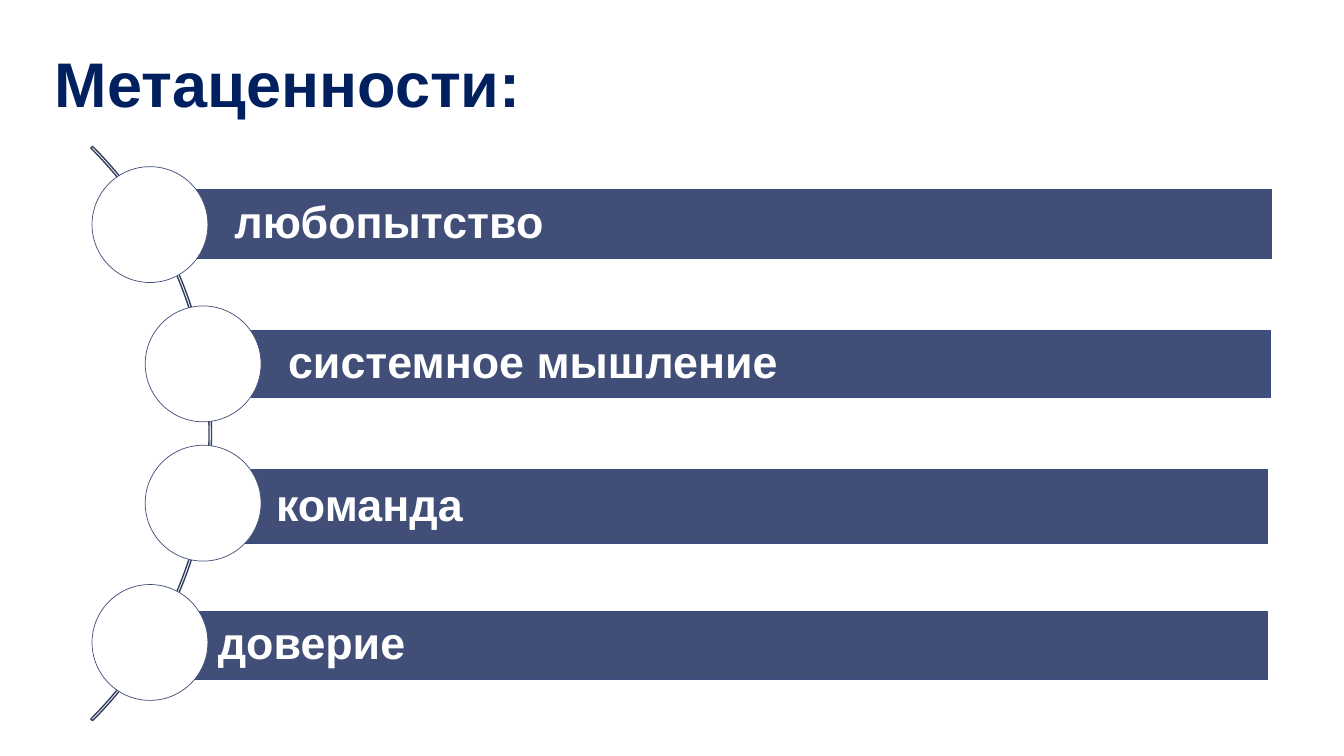
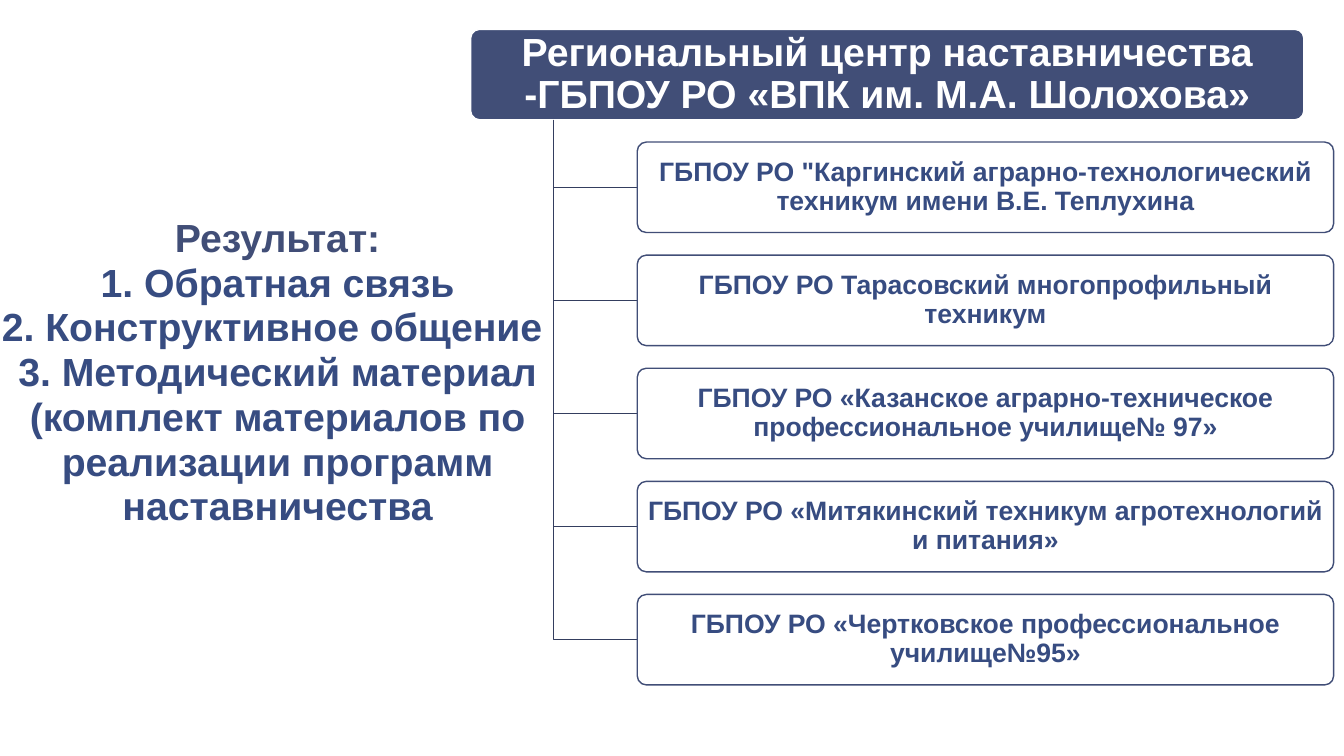
from dataclasses import dataclass
from typing import Optional

from pptx import Presentation
from pptx.dml.color import RGBColor
from pptx.enum.shapes import MSO_SHAPE as Preset
from pptx.enum.text import MSO_ANCHOR as Anchor, PP_ALIGN as Align
from pptx.util import Cm, Pt

WHITE = RGBColor(0xFF, 0xFF, 0xFF)
TITLE_BLUE = RGBColor(0x00, 0x20, 0x60)
SLATE = RGBColor(0x41, 0x4E, 0x77)
BLUE = RGBColor(0x37, 0x4C, 0x81)
DARK_SLATE = RGBColor(0x34, 0x3E, 0x5F)
FONT = "Arial"
TITLE_ONLY, BLANK = 5, 6


@dataclass(frozen=True)
class Box:
    """A rectangle measured in centimetres."""
    left: float
    top: float
    width: float
    height: float

    def lengths(self) -> tuple:
        return Cm(self.left), Cm(self.top), Cm(self.width), Cm(self.height)


@dataclass(frozen=True)
class Value:
    text: str
    bar: Box
    indent: float
    circle_left: float


VALUES = [
    Value("любопытство", Box(4.06, 4.78, 27.99, 1.73), 1.85, 2.32),
    Value("системное мышление", Box(4.47, 8.33, 27.55, 1.7), 2.79, 3.66),
    Value("команда", Box(4.8, 11.84, 27.15, 1.86), 2.16, 3.66),
    Value("доверие", Box(3.64, 15.4, 28.3, 1.73), 1.85, 2.32),
]
CIRCLE_TOP, CIRCLE_STEP, CIRCLE_SIZE = 4.2, 3.51, 2.92

RESULTS = [
    "Результат:",
    "1. Обратная связь",
    "2. Конструктивное общение ",
    "3. Методический материал",
    "(комплект материалов по реализации программ наставничества",
]
CENTRE = "Региональный центр наставничества -ГБПОУ РО «ВПК им. М.А. Шолохова»"
COLLEGES = [
    'ГБПОУ РО "Каргинский аграрно-технологический техникум имени В.Е. Теплухина',
    "ГБПОУ РО Тарасовский многопрофильный техникум",
    "ГБПОУ РО «Казанское аграрно-техническое профессиональное училище№ 97»",
    "ГБПОУ РО «Митякинский техникум агротехнологий и питания»",
    "ГБПОУ РО «Чертковское профессиональное училище№95»",
]
CENTRE_BOX = Box(11.86, 0.74, 21, 2.28)
COLLEGE_LEFT, COLLEGE_TOP, COLLEGE_STEP = 16.06, 3.58, 2.85
COLLEGE_WIDTH, COLLEGE_HEIGHT = 17.55, 2.28
TRUNK_X = 13.95


def format_text(frame, size: float, color: RGBColor, align=Align.LEFT,
                spacing: float = 1.0) -> None:
    for paragraph in frame.paragraphs:
        paragraph.alignment = align
        paragraph.line_spacing = spacing
        for run in paragraph.runs:
            font = run.font
            font.name, font.size, font.bold = FONT, Pt(size), True
            font.color.rgb = color


def set_insets(frame, left: float, right: float, vertical: float) -> None:
    frame.margin_left, frame.margin_right = Cm(left), Cm(right)
    frame.margin_top = frame.margin_bottom = Cm(vertical)


def style_shape(shape, fill: Optional[RGBColor], line: RGBColor,
                width: float) -> None:
    shape.shadow.inherit = False
    if fill is None:
        shape.fill.background()
    else:
        shape.fill.solid()
        shape.fill.fore_color.rgb = fill
    shape.line.color.rgb = line
    shape.line.width = Pt(width)


def add_preset(slide, preset, box: Box, fill: Optional[RGBColor],
               line: RGBColor, width: float):
    shape = slide.shapes.add_shape(preset, *box.lengths())
    style_shape(shape, fill, line, width)
    return shape


def add_rounded_label(slide, text: str, box: Box, size: float, fill: RGBColor,
                      line: RGBColor, color: RGBColor) -> None:
    label = add_preset(slide, Preset.ROUNDED_RECTANGLE, box, fill, line, 1)
    label.adjustments[0] = 0.1
    frame = label.text_frame
    frame.text = text
    frame.word_wrap = True
    frame.vertical_anchor = Anchor.MIDDLE
    set_insets(frame, 0.1, 0.1, 0.08)
    format_text(frame, size, color, Align.CENTER, 0.9)


def add_bracket(slide, middle: float) -> None:
    """Draw the bent line from the centre's box down and across to a college."""
    bottom = CENTRE_BOX.top + CENTRE_BOX.height
    builder = slide.shapes.build_freeform(Cm(TRUNK_X), Cm(bottom))
    builder.add_line_segments([(Cm(TRUNK_X), Cm(middle)),
                               (Cm(COLLEGE_LEFT), Cm(middle))], close=False)
    style_shape(builder.convert_to_shape(), None, DARK_SLATE, 1)


def add_title(slide, text: str) -> None:
    title = slide.shapes.title
    title.left, title.top, title.width, title.height = Box(
        1.13, 0.99, 31.5, 2.18).lengths()
    frame = title.text_frame
    frame.text = text
    frame.vertical_anchor = Anchor.TOP
    format_text(frame, 45, TITLE_BLUE)


def add_value(slide, value: Value, circle_top: float) -> None:
    bar = add_preset(slide, Preset.RECTANGLE, value.bar, SLATE, BLUE, 0.75)
    frame = bar.text_frame
    frame.text = value.text
    frame.word_wrap = True
    frame.vertical_anchor = Anchor.MIDDLE
    set_insets(frame, value.indent, 0.23, 0.23)
    format_text(frame, 32, WHITE, spacing=0.9)
    circle = Box(value.circle_left, circle_top, CIRCLE_SIZE, CIRCLE_SIZE)
    add_preset(slide, Preset.OVAL, circle, WHITE, SLATE, 0.5)


def build_values_slide(prs) -> None:
    slide = prs.slides.add_slide(prs.slide_layouts[TITLE_ONLY])
    add_title(slide, "Метаценности:")
    arc = add_preset(slide, Preset.BLOCK_ARC, Box(-15.14, 0.69, 20.47, 20.47),
                     None, DARK_SLATE, 1)
    for index, setting in enumerate((189, 27, 0.003)):
        arc.adjustments[index] = setting
    for index, value in enumerate(VALUES):
        add_value(slide, value, CIRCLE_TOP + index * CIRCLE_STEP)


def add_results(slide) -> None:
    results = slide.shapes.add_textbox(*Box(-0.23, 5.33, 14.45, 8.2).lengths())
    frame = results.text_frame
    frame.word_wrap = True
    frame.text = "\n".join(RESULTS)
    set_insets(frame, 0.25, 0.25, 0.13)
    format_text(frame, 28, BLUE, Align.CENTER, 0.95)
    frame.paragraphs[0].runs[0].font.color.rgb = SLATE


def build_network_slide(prs) -> None:
    slide = prs.slides.add_slide(prs.slide_layouts[BLANK])
    add_results(slide)
    add_rounded_label(slide, CENTRE, CENTRE_BOX, 28, SLATE, WHITE, WHITE)
    for index, college in enumerate(COLLEGES):
        box = Box(COLLEGE_LEFT, COLLEGE_TOP + index * COLLEGE_STEP,
                  COLLEGE_WIDTH, COLLEGE_HEIGHT)
        add_bracket(slide, box.top + box.height / 2)
        add_rounded_label(slide, college, box, 19, WHITE, SLATE, BLUE)


def main() -> None:
    prs = Presentation()
    prs.slide_width, prs.slide_height = Cm(33.87), Cm(19.05)
    build_values_slide(prs)
    build_network_slide(prs)
    prs.save("out.pptx")


if __name__ == "__main__":
    main()
